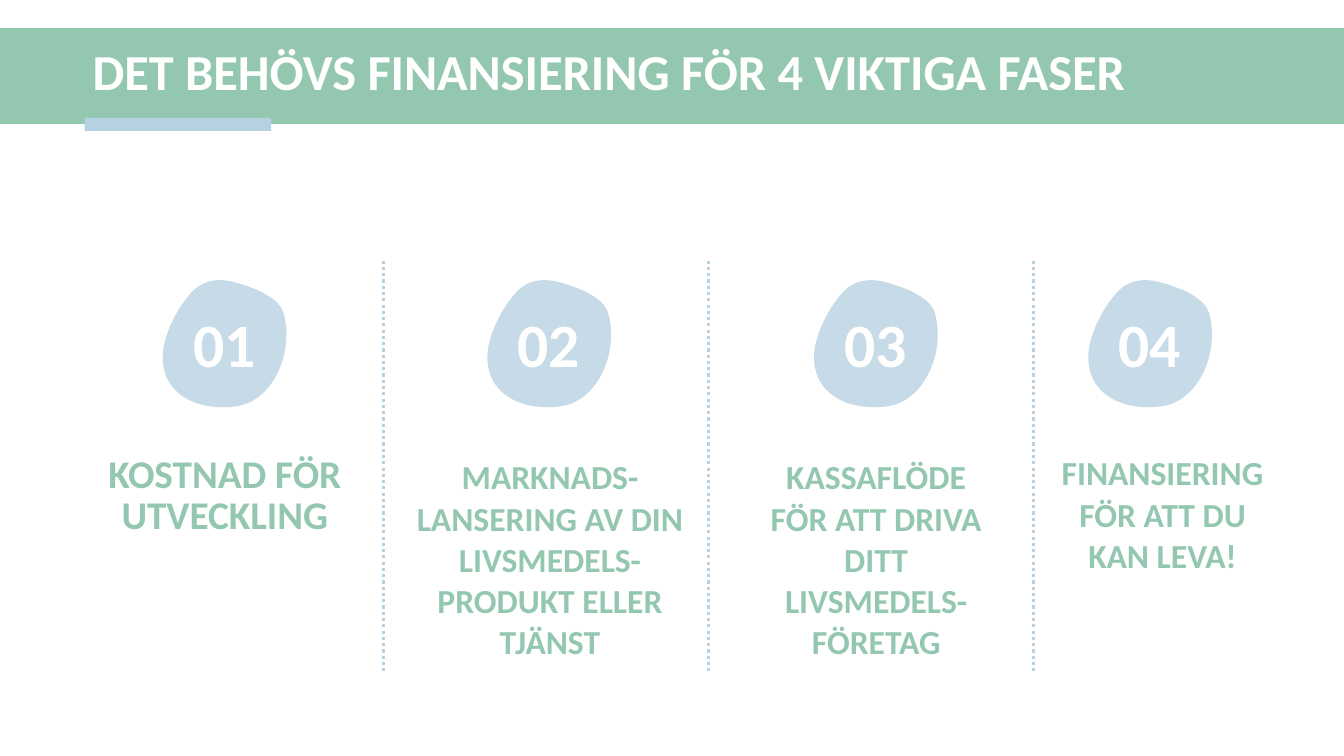
from lxml.etree import SubElement
from pptx import Presentation
from pptx.dml.color import RGBColor
from pptx.enum.dml import MSO_LINE_DASH_STYLE as Dash
from pptx.enum.shapes import MSO_CONNECTOR as Connector, MSO_SHAPE as Shape
from pptx.enum.text import MSO_ANCHOR as Anchor, PP_ALIGN as Align
from pptx.oxml.ns import qn
from pptx.util import Inches, Pt

GREEN = RGBColor(0x94, 0xC7, 0xB0)
BLUE = RGBColor(0xB6, 0xD1, 0xE1)
WHITE = RGBColor(0xFF, 0xFF, 0xFF)

# Pebble outline in inches from its left and top: start, then Bezier curves
PEBBLE_START = (0.74, 0.03)
PEBBLE_CURVES = [
    ((0.58, -0.02), (0.41, -0.02), (0.28, 0.12)),
    ((0.15, 0.26), (0.03, 0.49), (0, 0.68)),
    ((-0.06, 1.12), (0.33, 1.31), (0.73, 1.25)),
    ((1.11, 1.19), (1.3, 0.68), (1.19, 0.32)),
    ((1.15, 0.21), (1.05, 0.16), (0.96, 0.11)),
    ((0.89, 0.08), (0.81, 0.05), PEBBLE_START),
]
PEBBLE_TOP, PEBBLE_WIDTH, PEBBLE_HEIGHT = 2.78, 1.22, 1.26

# Number, pebble left, text box (left, top, width, height), size, lines
PHASES = [
    ("01", 1.62, (0.88, 4.47, 2.7, 0.9), 28, ["KOSTNAD FÖR UTVECKLING"]),
    ("02", 4.84, (3.98, 4.47, 2.95, 0.9), 24,
     ["MARKNADS-", "LANSERING AV DIN LIVSMEDELS-PRODUKT ELLER TJÄNST"]),
    ("03", 8.08, (7.44, 4.47, 2.5, 0.9), 24,
     ["KASSAFLÖDE FÖR ATT DRIVA DITT LIVSMEDELS-FÖRETAG"]),
    ("04", 10.8, (10.32, 4.43, 2.42, 0.94), 24,
     ["FINANSIERING FÖR ATT DU KAN LEVA!"]),
]


class PhaseSlide:
    font = "Calibri"

    def __init__(self, slide):
        self.shapes = slide.shapes

    def paint(self, shape, color):
        shape.shadow.inherit = False
        shape.fill.solid()
        shape.fill.fore_color.rgb = color
        shape.line.fill.background()

    def bar(self, box, color):
        self.paint(self.shapes.add_shape(Shape.RECTANGLE, *map(Inches, box)), color)

    def text(self, box, lines, size, color, spacing, align=Align.CENTER,
             anchor=Anchor.TOP, shapes=None):
        frame = (shapes or self.shapes).add_textbox(*map(Inches, box)).text_frame
        frame.word_wrap = True
        frame.vertical_anchor = anchor
        paragraph = frame.paragraphs[0]
        paragraph.alignment = align
        paragraph.line_spacing = spacing
        for index, line in enumerate(lines):
            if index:
                paragraph.add_line_break()
            run = paragraph.add_run()
            run.text = line
            run.font.name = self.font
            run.font.size = Pt(size)
            run.font.bold = True
            run.font.color.rgb = color

    def pebble(self, shapes, left):
        builder = shapes.build_freeform(*map(Inches, PEBBLE_START))
        builder.add_line_segments(
            [tuple(map(Inches, curve[-1])) for curve in PEBBLE_CURVES])
        pebble = builder.convert_to_shape()
        pebble.left, pebble.top = Inches(left), Inches(PEBBLE_TOP)
        pebble.width, pebble.height = Inches(PEBBLE_WIDTH), Inches(PEBBLE_HEIGHT)
        self.paint(pebble, BLUE)
        tint = pebble.fill._xPr.find(qn("a:solidFill"))[0]
        SubElement(tint, qn("a:alpha"), val="77000")

        # Bend the straight segments into curves
        outline = next(pebble._element.iter(qn("a:path")))
        outline.set("w", str(Inches(PEBBLE_WIDTH)))
        outline.set("h", str(Inches(PEBBLE_HEIGHT)))
        for segment in list(outline):
            outline.remove(segment)
        steps = [("a:moveTo", [PEBBLE_START])]
        steps += [("a:cubicBezTo", curve) for curve in PEBBLE_CURVES]
        for tag, points in steps:
            segment = SubElement(outline, qn(tag))
            for x, y in points:
                SubElement(segment, qn("a:pt"), x=str(Inches(x)), y=str(Inches(y)))
        SubElement(outline, qn("a:close"))

    def numbered_pebble(self, number, left):
        group = self.shapes.add_group_shape().shapes
        self.pebble(group, left)
        self.text((left, 3.39, 1.21, 1.01), [number], 44, WHITE, Pt(23.4),
                  shapes=group)

    def divider(self, x):
        divider = self.shapes.add_connector(
            Connector.STRAIGHT, Inches(x), Inches(6.66), Inches(x), Inches(2.58))
        divider.line.color.rgb = BLUE
        divider.line.width = Pt(2.25)
        divider.line.dash_style = Dash.ROUND_DOT
        SubElement(divider._element.spPr, qn("a:effectLst"))


def main():
    deck = Presentation()
    deck.slide_width, deck.slide_height = Inches(13.33), Inches(7.5)
    page = PhaseSlide(deck.slides.add_slide(deck.slide_layouts[6]))

    # Title band with accent
    page.bar((0, 0.28, 13.33, 0.95), GREEN)
    page.bar((0.84, 1.17, 1.85, 0.13), BLUE)
    page.text((0.82, 0.34, 11.93, 0.79),
              ["DET BEHÖVS FINANSIERING FÖR 4 VIKTIGA FASER"], 36, WHITE, 0.9,
              align=Align.LEFT, anchor=Anchor.MIDDLE)

    # Four phases
    for number, pebble_left, box, size, lines in PHASES:
        page.numbered_pebble(number, pebble_left)
        page.text(box, lines, size, GREEN, Pt(29.4))

    # Dotted dividers between phases
    for x in (3.8, 7.03, 10.25):
        page.divider(x)

    deck.save("out.pptx")


if __name__ == "__main__":
    main()
